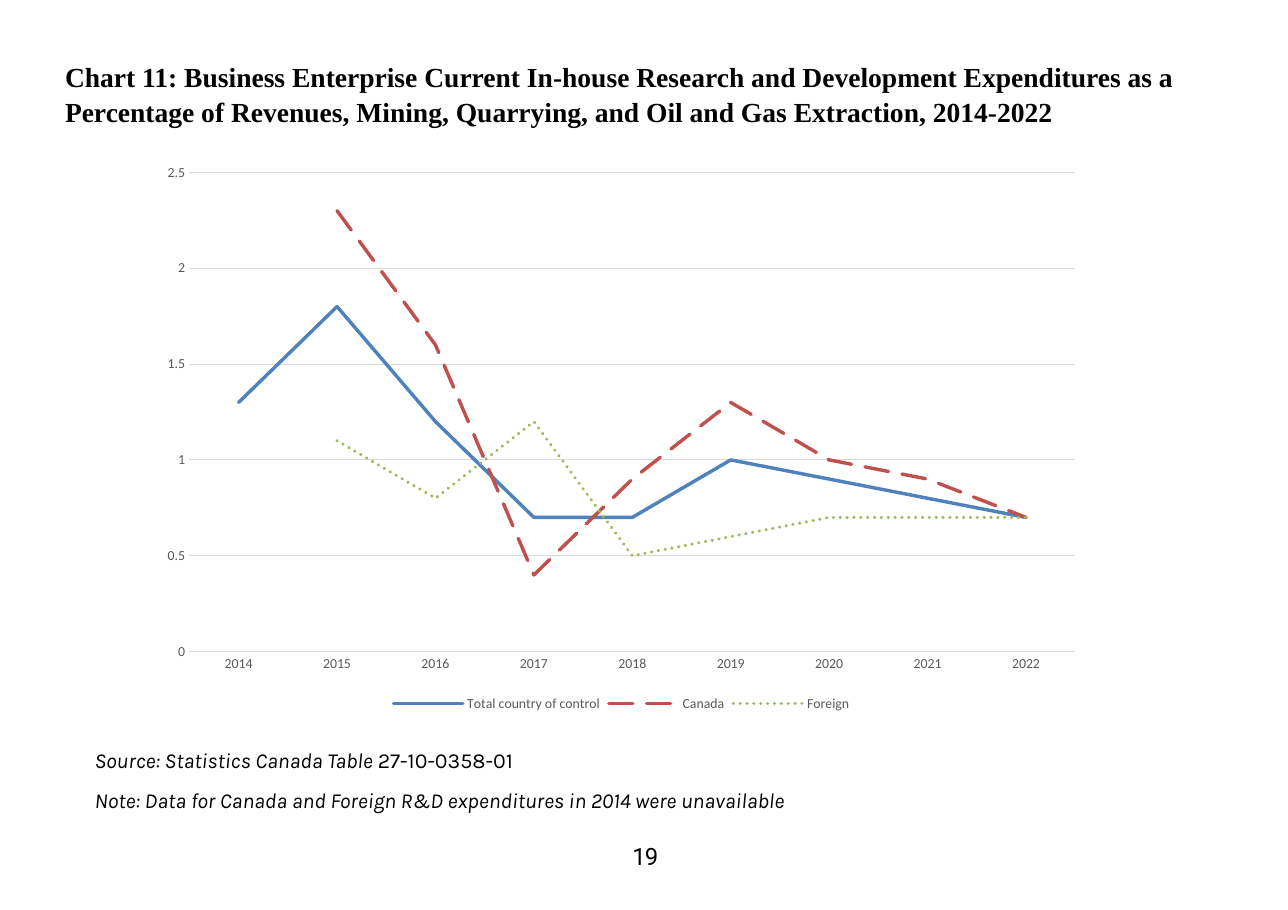
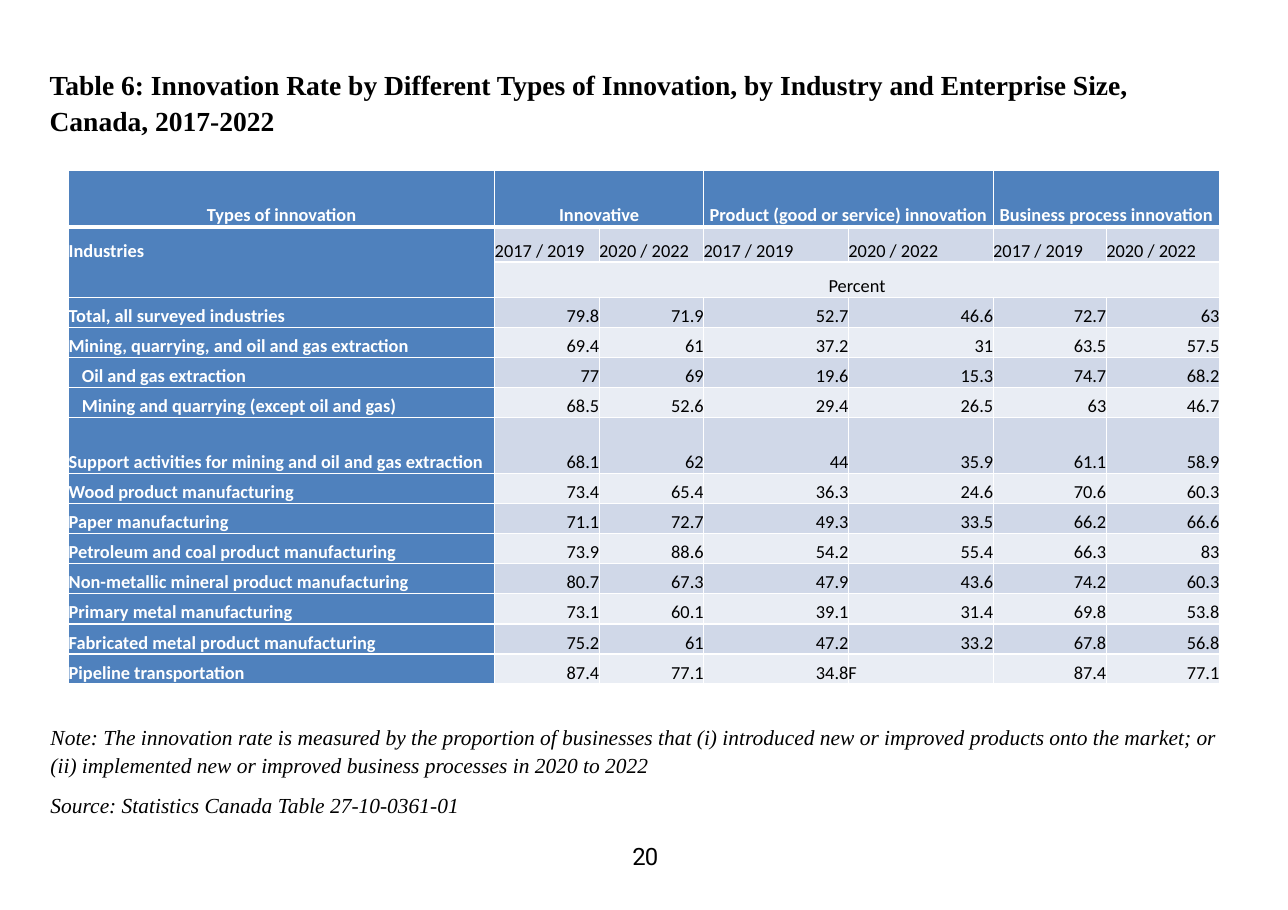
from dataclasses import dataclass

from lxml.etree import SubElement
from pptx import Presentation
from pptx.chart.data import CategoryChartData
from pptx.dml.color import RGBColor
from pptx.enum.chart import XL_CHART_TYPE as ChartType
from pptx.enum.chart import XL_LEGEND_POSITION as LegendPosition
from pptx.enum.chart import XL_TICK_MARK as TickMark
from pptx.enum.dml import MSO_LINE as Dash
from pptx.enum.text import MSO_ANCHOR as Anchor
from pptx.enum.text import MSO_AUTO_SIZE as AutoSize
from pptx.enum.text import PP_ALIGN as Align
from pptx.oxml.ns import qn
from pptx.util import Pt


@dataclass(frozen=True)
class Theme:
    ink: str = "000000"
    white: str = "FFFFFF"
    blue: str = "4F81BD"
    red: str = "C0504D"
    green: str = "9BBB59"
    dark_band: str = "D0D8E8"
    light_band: str = "E9EDF4"
    axis_text: str = "595959"
    grid: str = "D9D9D9"
    serif: str = "Times New Roman"
    sans: str = "Calibri"
    note: str = "Karla"
    number: str = "Roboto"
    title_size: float = 18
    note_size: float = 14
    table_size: float = 12
    chart_size: float = 9
    number_size: float = 15.6
    line_spacing: float = 1.07


THEME = Theme()
SLIDE_SIZE = (841.68, 594.72)
NUMBER_BOX = (407.5, 550, 24.5, 18.7)

YEARS = [str(year) for year in range(2014, 2023)]
SPENDING = [
    ("Total country of control", [1.3, 1.8, 1.2, 0.7, 0.7, 1, 0.9, 0.8, 0.7],
     THEME.blue, Dash.SOLID),
    ("Canada", [None, 2.3, 1.6, 0.4, 0.9, 1.3, 1, 0.9, 0.7],
     THEME.red, Dash.LONG_DASH),
    ("Foreign", [None, 1.1, 0.8, 1.2, 0.5, 0.6, 0.7, 0.7, 0.7],
     THEME.green, Dash.ROUND_DOT),
]

INNOVATION_TYPES = ["Innovative", "Product (good or service) innovation",
                    "Business process innovation"]
PERIODS = ["2017 / 2019", "2020 / 2022"]
INDUSTRIES = [
    ("Total, all surveyed industries", 79.8, 71.9, 52.7, 46.6, 72.7, 63),
    ("Mining, quarrying, and oil and gas extraction",
     69.4, 61, 37.2, 31, 63.5, 57.5),
    ("Oil and gas extraction", 77, 69, 19.6, 15.3, 74.7, 68.2),
    ("Mining and quarrying (except oil and gas)",
     68.5, 52.6, 29.4, 26.5, 63, 46.7),
    ("Support activities for mining and oil and gas extraction",
     68.1, 62, 44, 35.9, 61.1, 58.9),
    ("Wood product manufacturing", 73.4, 65.4, 36.3, 24.6, 70.6, 60.3),
    ("Paper manufacturing", 71.1, 72.7, 49.3, 33.5, 66.2, 66.6),
    ("Petroleum and coal product manufacturing",
     73.9, 88.6, 54.2, 55.4, 66.3, 83),
    ("Non-metallic mineral product manufacturing",
     80.7, 67.3, 47.9, 43.6, 74.2, 60.3),
    ("Primary metal manufacturing", 73.1, 60.1, 39.1, 31.4, 69.8, 53.8),
    ("Fabricated metal product manufacturing",
     75.2, 61, 47.2, 33.2, 67.8, 56.8),
    ("Pipeline transportation", 87.4, 77.1, 34.8, "F", 87.4, 77.1),
]
SUB_INDUSTRIES = {"Oil and gas extraction",
                  "Mining and quarrying (except oil and gas)"}

COLUMN_WIDTHS = [278.4, 68.3, 68.3, 94.6, 94.6, 73.9, 73.9]
TALL_ROW, SUBHEAD_ROW, DATA_ROW = 36.5, 23.2, 19.65
FIRST_DATA_ROW = 3
WRAPPED_ROW = 7
SUB_INDENT = 8.6


def color(value):
    return RGBColor.from_string(value)


def to_points(box):
    return [Pt(length) for length in box]


def write(paragraph, text, *, font, size, fill=THEME.ink, bold=False,
          italic=False, align=Align.LEFT, spacing=THEME.line_spacing,
          after=0, tracking=None):
    paragraph.alignment = align
    paragraph.line_spacing = spacing
    paragraph.space_after = Pt(after)
    run = paragraph.add_run()
    run.text = text
    run.font.name = font
    run.font.size = Pt(size)
    run.font.bold = bold
    run.font.italic = italic
    run.font.color.rgb = color(fill)
    if tracking is not None:
        run.font._element.set("spc", str(round(tracking * 100)))


def set_margins(target, left=0, top=0, right=0, bottom=0):
    target.margin_left, target.margin_top = Pt(left), Pt(top)
    target.margin_right, target.margin_bottom = Pt(right), Pt(bottom)


def add_title(slide, box, text, margins):
    title = slide.shapes.title
    title.left, title.top, title.width, title.height = to_points(box)
    frame = title.text_frame
    frame.word_wrap = True
    frame.auto_size = AutoSize.NONE
    frame.vertical_anchor = Anchor.TOP
    set_margins(frame, *margins)
    write(frame.paragraphs[0], text, font=THEME.serif, size=THEME.title_size,
          bold=True, after=8)


def add_notes(slide, box, lines, font):
    frame = slide.shapes.add_textbox(*to_points(box)).text_frame
    frame.word_wrap = True
    for index, runs in enumerate(lines):
        paragraph = frame.add_paragraph() if index else frame.paragraphs[0]
        for text, italic in runs:
            write(paragraph, text, font=font, size=THEME.note_size,
                  italic=italic, after=8)


def add_page_number(slide, box, number):
    frame = slide.shapes.add_textbox(*to_points(box)).text_frame
    frame.word_wrap = True
    set_margins(frame, left=5.8)
    write(frame.paragraphs[0], str(number), font=THEME.number,
          size=THEME.number_size, spacing=1.0, tracking=-0.7)


def style_font(font):
    font.name = THEME.sans
    font.size = Pt(THEME.chart_size)
    font.color.rgb = color(THEME.axis_text)


def style_line(line, value, width):
    line.color.rgb = color(value)
    line.width = Pt(width)


def add_spending_chart(slide, box):
    data = CategoryChartData()
    data.categories = YEARS
    for name, values, _, _ in SPENDING:
        data.add_series(name, values)
    chart = slide.shapes.add_chart(ChartType.LINE, *to_points(box), data).chart
    chart.has_title = False
    style_font(chart.font)
    chart.has_legend = True
    chart.legend.position = LegendPosition.BOTTOM
    chart.legend.include_in_layout = False
    style_font(chart.legend.font)

    for axis in (chart.category_axis, chart.value_axis):
        axis.major_tick_mark = axis.minor_tick_mark = TickMark.NONE
        style_font(axis.tick_labels.font)
    style_line(chart.category_axis.format.line, THEME.grid, 0.75)
    value_axis = chart.value_axis
    value_axis.minimum_scale, value_axis.maximum_scale = 0, 2.5
    value_axis.major_unit = 0.5
    value_axis.format.line.fill.background()
    style_line(value_axis.major_gridlines.format.line, THEME.grid, 0.75)

    plot = chart.plots[0]
    plot.vary_by_categories = False
    for series, (_, _, value, dash) in zip(plot.series, SPENDING):
        series.smooth = False
        style_line(series.format.line, value, 2.25)
        series.format.line.dash_style = dash
    for line in chart.element.xpath(".//c:ser/c:spPr/a:ln"):
        line.set("cap", "rnd")


def set_borders(cell, **widths):
    properties = cell._tc.get_or_add_tcPr()
    for side in "LRTB":
        line = SubElement(properties, qn(f"a:ln{side}"),
                          w=str(Pt(widths.get(side, 1))))
        fill = SubElement(line, qn("a:solidFill"))
        SubElement(fill, qn("a:srgbClr"), val=THEME.white)


def style_cell(cell, row, column):
    set_margins(cell)
    cell.vertical_anchor = Anchor.BOTTOM
    set_borders(cell, T=3 if row == 1 else 1, B=3 if row == 0 else 1)
    band = THEME.dark_band if row % 2 else THEME.light_band
    cell.fill.solid()
    cell.fill.fore_color.rgb = color(
        THEME.blue if row == 0 or column == 0 else band)


def write_cell(cell, text, align=Align.LEFT, heading=False):
    write(cell.text_frame.paragraphs[0], text, font=THEME.sans,
          size=THEME.table_size, bold=heading, align=align,
          fill=THEME.white if heading else THEME.ink)


def add_innovation_table(slide, left, top):
    heights = [TALL_ROW, SUBHEAD_ROW, SUBHEAD_ROW]
    heights += [DATA_ROW] * len(INDUSTRIES)
    heights[WRAPPED_ROW] = TALL_ROW
    box = (left, top, sum(COLUMN_WIDTHS), sum(heights))
    table = slide.shapes.add_table(
        len(heights), len(COLUMN_WIDTHS), *to_points(box)).table
    table.horz_banding = False
    for column, width in zip(table.columns, COLUMN_WIDTHS):
        column.width = Pt(width)
    for row, height in enumerate(heights):
        table.rows[row].height = Pt(height)
        for column in range(len(COLUMN_WIDTHS)):
            style_cell(table.cell(row, column), row, column)

    write_cell(table.cell(0, 0), "Types of innovation", Align.CENTER, True)
    for index, name in enumerate(INNOVATION_TYPES):
        first = 1 + index * len(PERIODS)
        table.cell(0, first).merge(table.cell(0, first + 1))
        write_cell(table.cell(0, first), name, Align.CENTER, True)
        for offset, period in enumerate(PERIODS):
            write_cell(table.cell(1, first + offset), period)
    industries = table.cell(1, 0)
    industries.merge(table.cell(2, 0))
    industries.margin_bottom = Pt(SUBHEAD_ROW)
    write_cell(industries, "Industries", heading=True)
    table.cell(2, 1).merge(table.cell(2, 6))
    write_cell(table.cell(2, 1), "Percent", Align.CENTER)

    for row, (name, *rates) in enumerate(INDUSTRIES, FIRST_DATA_ROW):
        label = table.cell(row, 0)
        write_cell(label, name, heading=True)
        if name in SUB_INDUSTRIES:
            label.margin_left = Pt(SUB_INDENT)
        for column, rate in enumerate(rates, 1):
            align = Align.LEFT if isinstance(rate, str) else Align.RIGHT
            write_cell(table.cell(row, column), str(rate), align)


def add_slide(presentation, number):
    slide = presentation.slides.add_slide(presentation.slide_layouts[5])
    add_page_number(slide, NUMBER_BOX, number)
    return slide


def build_chart_slide(presentation):
    slide = add_slide(presentation, 19)
    add_title(slide, (42.5, 36.7, 741.6, 46.1),
              "Chart 11: Business Enterprise Current In-house Research and "
              "Development Expenditures as a Percentage of Revenues, Mining, "
              "Quarrying, and Oil and Gas Extraction, 2014-2022",
              (0, 0.7, 0, 0))
    add_spending_chart(slide, (97.2, 100.1, 617.8, 367.9))
    add_notes(slide, (54.7, 483.8, 792.7, 51.1), [
        [("Source: Statistics Canada Table ", True), ("27-10-0358-01", False)],
        [("Note: Data for Canada and Foreign R&D expenditures in 2014 were "
          "unavailable", True)],
    ], THEME.note)


def build_table_slide(presentation):
    slide = add_slide(presentation, 20)
    add_title(slide, (25.2, 39.6, 728.6, 53.3),
              "Table 6: Innovation Rate by Different Types of Innovation, by "
              "Industry and Enterprise Size, Canada, 2017-2022",
              (7.2, 3.6, 7.2, 3.6))
    add_innovation_table(slide, 44.9, 111.6)
    add_notes(slide, (25.9, 468.7, 779, 68.4), [
        [("Note: The innovation rate is measured by the proportion of "
          "businesses that (i) introduced new or improved products onto the "
          "market; or (ii) implemented new or improved business processes in "
          "2020 to 2022", True)],
        [("Source: Statistics Canada Table 27-10-0361-01", True)],
    ], THEME.serif)


def main():
    presentation = Presentation()
    presentation.slide_width, presentation.slide_height = to_points(SLIDE_SIZE)
    build_chart_slide(presentation)
    build_table_slide(presentation)
    presentation.save("out.pptx")


if __name__ == "__main__":
    main()
